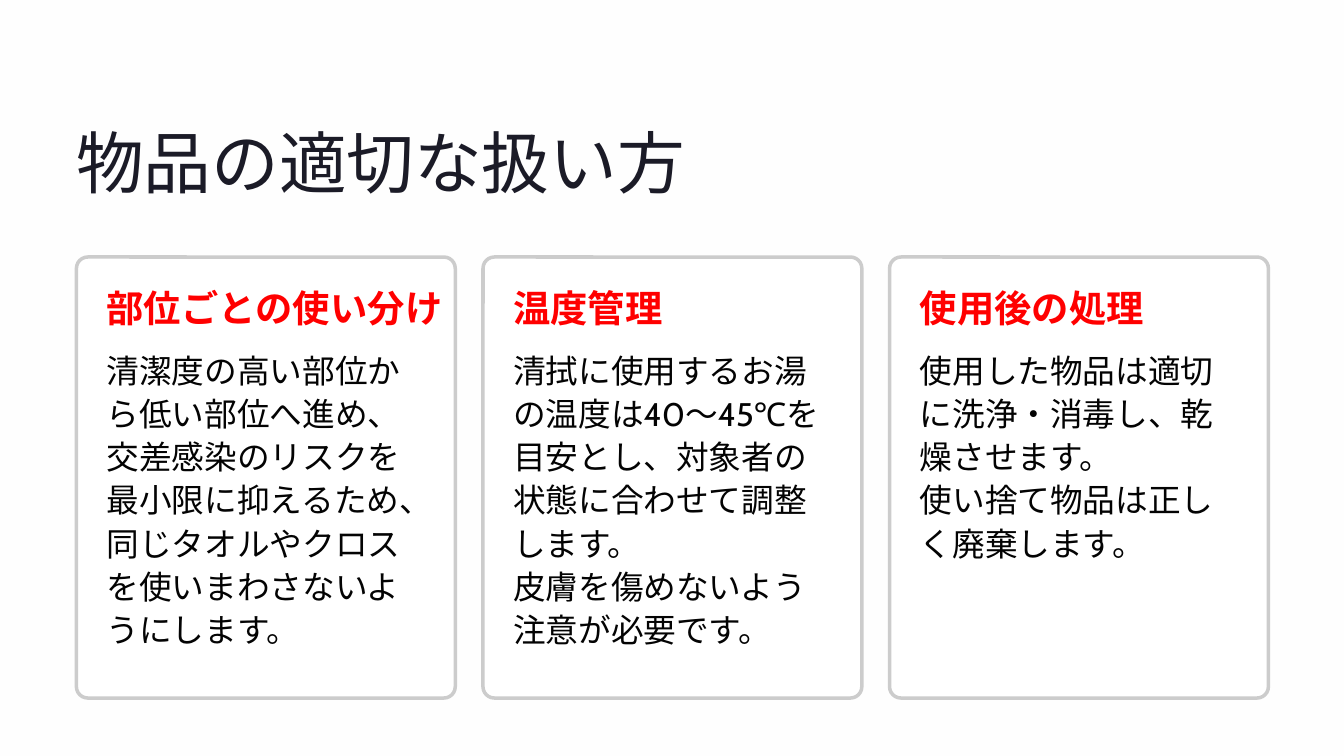
from lxml import etree
from pptx import Presentation
from pptx.dml.color import RGBColor
from pptx.enum.lang import MSO_LANGUAGE_ID
from pptx.enum.shapes import MSO_SHAPE
from pptx.oxml.ns import qn
from pptx.util import Inches, Pt

ROUNDED = MSO_SHAPE.ROUNDED_RECTANGLE
JAPANESE = MSO_LANGUAGE_ID.JAPANESE

PAPER = RGBColor(0xFE, 0xFE, 0xFE)
WHITE = RGBColor(0xFF, 0xFF, 0xFF)
BORDER = RGBColor(0xCC, 0xCC, 0xCC)
INK = RGBColor(0x1B, 0x1B, 0x27)
RED = RGBColor(0xFF, 0x00, 0x00)
BLACK = RGBColor(0x03, 0x03, 0x03)

TITLE = {"name": "Inter", "size": Pt(58), "bold": False}
HEADING = {"name": "Inter", "size": Pt(32), "bold": True}
BODY = {"name": "Cabin", "size": Pt(28), "bold": False}

MARGIN, CARD_TOP = 0.91, 3.06
CARD_W, CARD_H = 4.51, 5.25
GAP = 0.33
PAD = 0.36
HEADING_W, BODY_W = 4.1, 3.78

CARDS = [
    ("部位ごとの使い分け",
     ["清潔度の高い部位から低い部位へ進め、交差感染のリスクを最小限に抑えるため、"
      "同じタオルやクロスを使いまわさないようにします。"]),
    ("温度管理",
     ["清拭に使用するお湯の温度は40〜45℃を目安とし、対象者の状態に合わせて調整します。",
      "皮膚を傷めないよう注意が必要です。"]),
    ("使用後の処理",
     ["使用した物品は適切に洗浄・消毒し、乾燥させます。",
      "使い捨て物品は正しく廃棄します。"]),
]


def add_text(box, lines, font, color, spacing):
    """Place paragraphs in a text box without insets; box is in inches."""
    tf = slide.shapes.add_textbox(*map(Inches, box)).text_frame
    tf.word_wrap = True
    for side in ("left", "top", "right", "bottom"):
        setattr(tf, f"margin_{side}", 0)
    for i, line in enumerate(lines):
        p = tf.add_paragraph() if i else tf.paragraphs[0]
        p.line_spacing = Pt(spacing)
        r = p.add_run()
        r.text = line
        for key, value in font.items():
            setattr(r.font, key, value)
        r.font.color.rgb = color
        r.font.language_id = JAPANESE
        east_asian = etree.SubElement(r.font._element, qn("a:ea"))
        east_asian.set("typeface", font["name"])


prs = Presentation()
prs.slide_width, prs.slide_height = Inches(16), Inches(9)
slide = prs.slides.add_slide(prs.slide_layouts[6])
slide.background.fill.solid()
slide.background.fill.fore_color.rgb = PAPER

add_text((MARGIN, 1.4, 8.1, 1.01), ["物品の適切な扱い方"], TITLE, INK, 72.5)

for col, (heading, body) in enumerate(CARDS):
    left = MARGIN + col * (CARD_W + GAP)
    sp = slide.shapes.add_shape(
        ROUNDED, *map(Inches, (left, CARD_TOP, CARD_W, CARD_H)))
    sp.adjustments[0] = 0.03
    sp.shadow.inherit = False
    sp.fill.solid()
    sp.fill.fore_color.rgb = WHITE
    sp.line.color.rgb = BORDER
    sp.line.width = Pt(3)

    text_left = left + PAD
    add_text((text_left, CARD_TOP + 0.37, HEADING_W, 0.51), [heading],
             HEADING, RED, 36)
    add_text((text_left, CARD_TOP + 1.07, BODY_W, 3.11), body,
             BODY, BLACK, 37)

prs.save("out.pptx")
